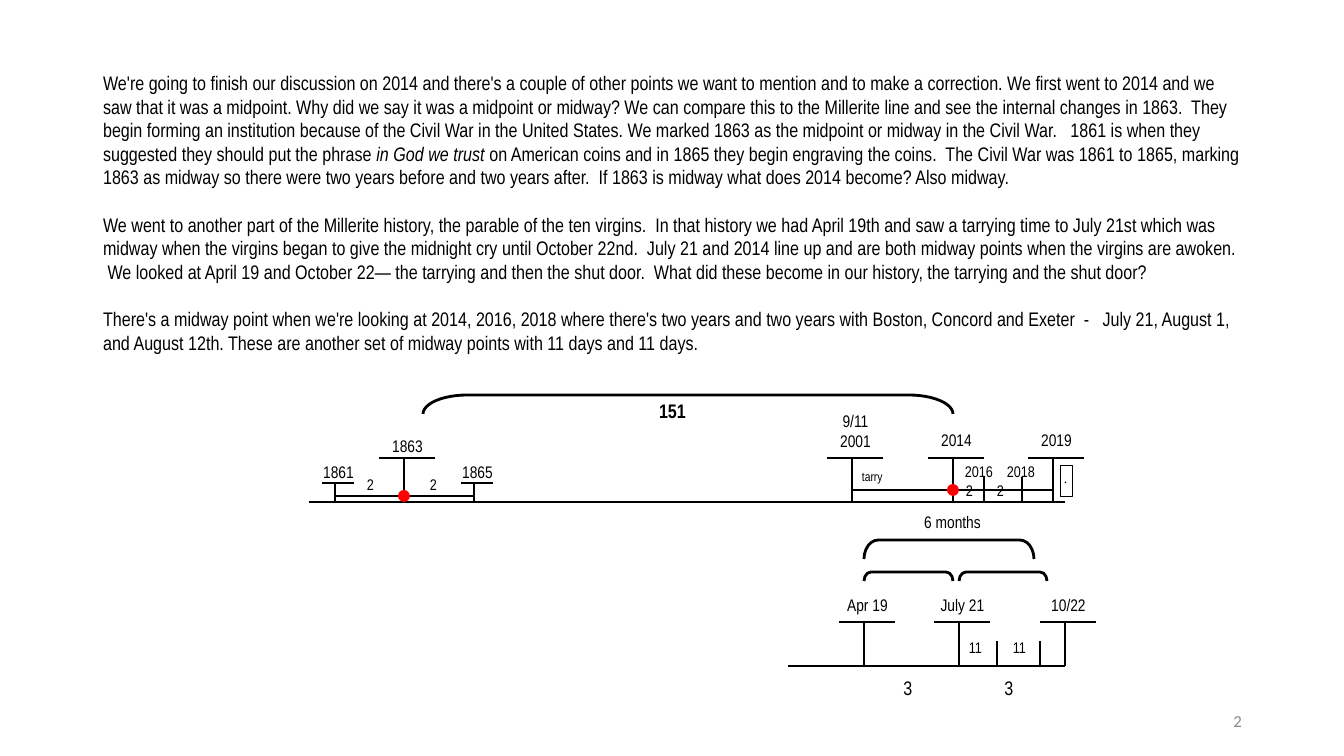
from dataclasses import dataclass
from lxml.etree import SubElement
from pptx import Presentation
from pptx.dml.color import RGBColor
from pptx.enum.shapes import MSO_CONNECTOR, MSO_SHAPE
from pptx.enum.text import MSO_ANCHOR, MSO_AUTO_SIZE, PP_ALIGN
from pptx.oxml.ns import qn
from pptx.util import Pt


@dataclass(frozen=True)
class Theme:
    black: RGBColor = RGBColor(0, 0, 0)
    red: RGBColor = RGBColor(255, 0, 0)
    grey: RGBColor = RGBColor(140, 140, 140)
    font: str = "Arial Narrow"
    body: int = 14
    date: int = 12
    gap: int = 11
    tiny: int = 9
    line: float = 2
    hairline: float = 0.25
    inset: int = 4


T = Theme()
SCALE = 914400 / 100.8  # EMU per px

# Content: paragraphs as (text, italic) runs
PARAGRAPHS = [
    [("We're going to finish our discussion on 2014 and there's a couple of other points we want to "
      "mention and to make a correction. We first went to 2014 and we saw that it was a midpoint. Why "
      "did we say it was a midpoint or midway? We can compare this to the Millerite line and see the "
      "internal changes in 1863.  They begin forming an institution because of the Civil War in the "
      "United States. We marked 1863 as the midpoint or midway in the Civil War.   1861 is when they "
      "suggested they should put the phrase ", False),
     ("in God we trust ", True),
     ("on American coins and in 1865 they begin engraving the coins.  The Civil War was 1861 to 1865, "
      "marking 1863 as midway so there were two years before and two years after.  If 1863 is midway "
      "what does 2014 become? Also midway.", False)],
    [("We went to another part of the Millerite history, the parable of the ten virgins.  In that "
      "history we had April 19th and saw a tarrying time to July 21st which was midway when the virgins "
      "began to give the midnight cry until October 22nd.  July 21 and 2014 line up and are both midway "
      "points when the virgins are awoken.  We looked at April 19 and October 22— the tarrying and then "
      "the shut door.  What did these become in our history, the tarrying and the shut door?", False)],
    [("There's a midway point when we're looking at 2014, 2016, 2018 where there's two years and two "
      "years with Boston, Concord and Exeter  -   July 21, August 1, and August 12th. These are another "
      "set of midway points with 11 days and 11 days.", False)],
]

YEARS_Y, DAYS_Y = 502, 666
BASELINES = [(309, 1065, YEARS_Y), (788, 1065, DAYS_Y)]
SPANS = [(852, 1053, 490), (335, 474, 496)]
MIDPOINTS = [(953, 490), (404, 496)]

# Dates: label, stem x, baseline y, stem height, label height, cap reach left and right
TALL, SHORT = (25, 31), (13, 19)
DATES = [
    ("1861", 335, YEARS_Y, 19, 25, SHORT),
    ("1863", 404, YEARS_Y, 44, 26, TALL),
    ("1865", 474, YEARS_Y, 19, 25, SHORT),
    ("9/11\n2001", 852, YEARS_Y, 44, 51, TALL),
    ("2014", 953, YEARS_Y, 44, 32, TALL),
    ("2019", 1053, YEARS_Y, 44, 32, TALL),
    ("Apr 19", 864, DAYS_Y, 44, 31, TALL),
    ("July 21", 959, DAYS_Y, 44, 31, TALL),
    ("10/22", 1065, DAYS_Y, 44, 31, TALL),
]
TICK_HEIGHT = 25
TICKS = [(984, YEARS_Y), (1022, YEARS_Y), (997, DAYS_Y), (1040, DAYS_Y)]

# Brackets: left, right, top, depth, curve
BRACKETS = [
    (423, 953, 395, 19, 2.33),
    (864, 1034, 540, 19, 0.75),
    (864, 953, 572, 9, 0.78),
    (959, 1047, 572, 9, 0.78),
]

# Labels: text, left, top, width, height, size
LABELS = [
    ("2", 953, 477, 33, 25, T.gap),
    ("2", 984, 477, 33, 25, T.gap),
    ("2016", 959, 458, 40, 25, T.gap),
    ("2018", 997, 458, 48, 22, T.gap),
    ("2", 354, 471, 33, 25, T.gap),
    ("2", 417, 471, 33, 25, T.gap),
    ("11", 959, 634, 33, 25, T.gap),
    ("11", 1003, 634, 33, 25, T.gap),
    ("3", 889, 672, 38, 31, T.body),
    ("3", 990, 672, 38, 31, T.body),
    ("6 months", 896, 508, 113, 31, T.date),
]


def px(n):
    return round(n * SCALE)


def box(*lengths):
    return [px(n) for n in lengths]


def write(sp, text, size, align=PP_ALIGN.CENTER, color=T.black, font=T.font, bold=False,
          anchor=MSO_ANCHOR.TOP):
    tf = sp.text_frame
    tf.word_wrap = True
    tf.vertical_anchor = anchor
    tf.margin_left = tf.margin_right = tf.margin_top = tf.margin_bottom = px(T.inset)
    tf.text = text
    for p in tf.paragraphs:
        p.alignment = align
        f = p.runs[0].font
        f.name, f.size, f.bold = font, Pt(size), bold
        f.color.rgb = color


def label(s, text, x, y, w, h, size, **style):
    write(s.shapes.add_textbox(*box(x, y, w, h)), text, size, **style)


def line(s, x1, y1, x2, y2):
    cx = s.shapes.add_connector(MSO_CONNECTOR.STRAIGHT, *box(x1, y1, x2, y2))
    cx.line.color.rgb = T.black
    cx.line.width = Pt(T.line)
    SubElement(cx._element.spPr, qn("a:effectLst"))


def outline(s, kind, x, y, w, h, width):
    sp = s.shapes.add_shape(kind, *box(x, y, w, h))
    sp.shadow.inherit = False
    sp.fill.background()
    sp.line.color.rgb = T.black
    sp.line.width = Pt(width)
    return sp


def bracket(s, left, right, top, depth, curve):
    length = right - left
    x, y = (left + right - depth) / 2, top + (depth - length) / 2
    sp = outline(s, MSO_SHAPE.LEFT_BRACKET, x, y, depth, length, T.line)
    sp.adjustments[0] = curve
    sp.rotation = 90


def dot(s, x, y, size=12):
    sp = s.shapes.add_shape(MSO_SHAPE.OVAL, *box(x - size / 2, y - size / 2, size, size))
    sp.shadow.inherit = False
    sp.fill.solid()
    sp.fill.fore_color.rgb = T.red
    sp.line.fill.background()


def body_text(sp):
    sp.left, sp.top, sp.width, sp.height = box(93, 66, 1159, 302)
    tf = sp.text_frame
    tf.auto_size = MSO_AUTO_SIZE.NONE
    tf.word_wrap = True
    for i, runs in enumerate(PARAGRAPHS):
        p = tf.paragraphs[0] if i == 0 else tf.add_paragraph()
        p.space_before, p.line_spacing = Pt(0), 1.0
        p.space_after = Pt(17 if i < len(PARAGRAPHS) - 1 else 0)
        pPr = p._p.get_or_add_pPr()
        pPr.set("marL", "0")
        pPr.set("indent", "0")
        SubElement(pPr, qn("a:buNone"))
        for text, italic in runs:
            r = p.add_run()
            r.text = text
            r.font.name, r.font.size, r.font.italic = T.font, Pt(T.body), italic
            r.font.color.rgb = T.black


def main():
    prs = Presentation()
    prs.slide_width, prs.slide_height = box(1344, 756)
    s = prs.slides.add_slide(prs.slide_layouts[1])
    title = s.shapes.title._element
    title.getparent().remove(title)
    body_text(s.placeholders[1])

    # Timelines
    for x1, x2, y in BASELINES + SPANS:
        line(s, x1, y, x2, y)
    for text, x, base, stem, height, (before, after) in DATES:
        cap = base - stem
        line(s, x, cap, x, base)
        line(s, x - before, cap, x + after, cap)
        label(s, text, x - 25, cap - height, 57, height, T.date)
    for x, base in TICKS:
        line(s, x, base - TICK_HEIGHT, x, base)
    for x, y in MIDPOINTS:
        dot(s, x, y)

    # Brackets and labels
    for parts in BRACKETS:
        bracket(s, *parts)
    for parts in LABELS:
        label(s, *parts)
    label(s, "151", 644, 395, 57, 38, T.body, bold=True)
    label(s, "tarry", 858, 465, 57, 31, T.tiny, align=PP_ALIGN.LEFT)
    door = outline(s, MSO_SHAPE.RECTANGLE, 1060, 465, 12, 31, T.hairline)
    write(door, ".", 10, align=PP_ALIGN.LEFT, font="Times New Roman")

    # Page number
    label(s, "2", 950, 701, 296, 40, T.date, align=PP_ALIGN.RIGHT, color=T.grey,
          font="Calibri", anchor=MSO_ANCHOR.MIDDLE)
    prs.save("out.pptx")


if __name__ == "__main__":
    main()
